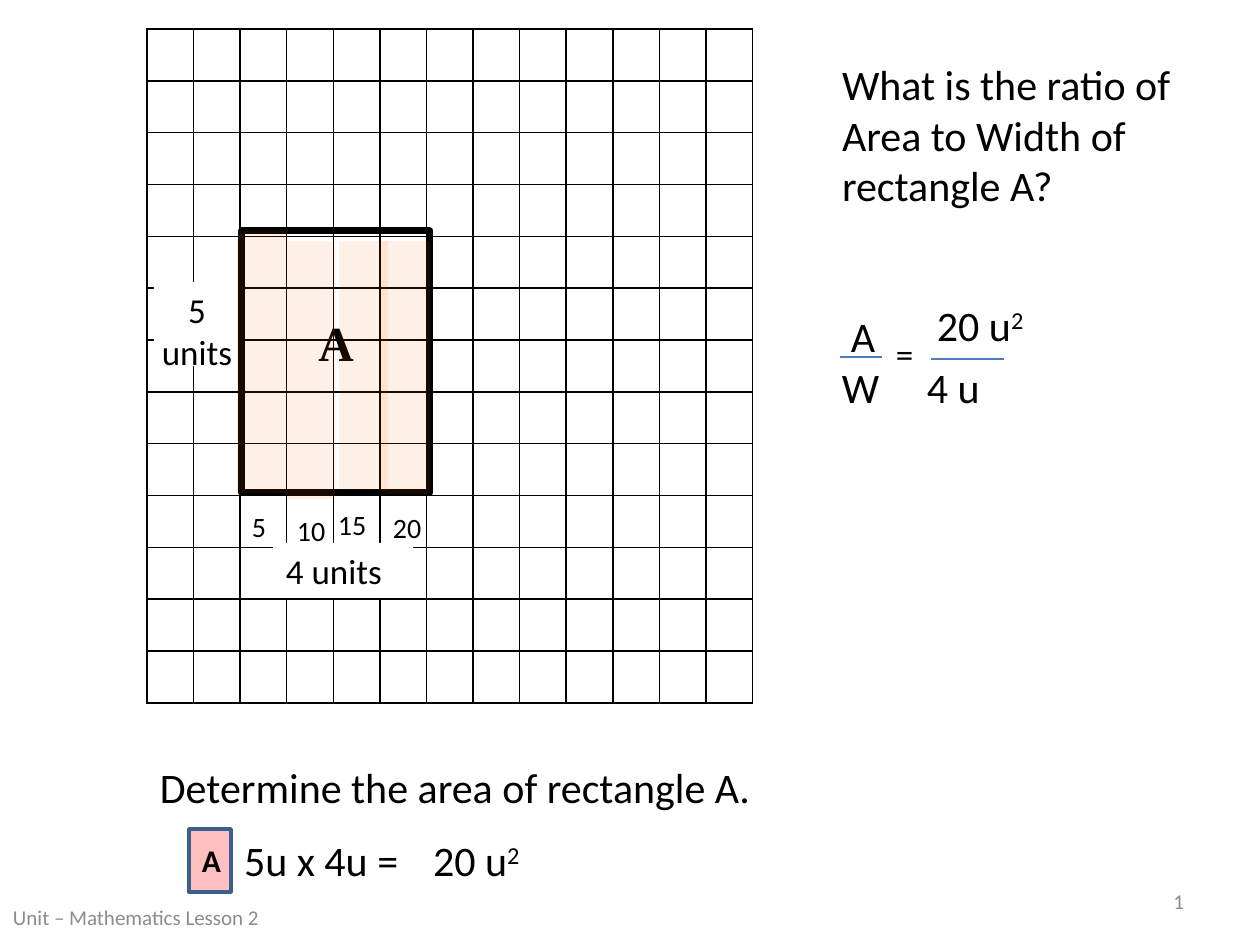
"""Build the lesson slide on the ratio of area to width of rectangle A."""
import pptx
import pptx.util
import pptx.dml.color
import pptx.enum.shapes
import pptx.enum.text
import pptx.oxml.ns
import lxml.etree

PX = 914400 / 126
BLACK = pptx.dml.color.RGBColor(0x00, 0x00, 0x00)
WHITE = pptx.dml.color.RGBColor(0xFF, 0xFF, 0xFF)
ORANGE = pptx.dml.color.RGBColor(0xFF, 0x66, 0x00)
RED = pptx.dml.color.RGBColor(0xFF, 0x00, 0x00)
NAVY = pptx.dml.color.RGBColor(0x3A, 0x5F, 0x8C)
BLUE = pptx.dml.color.RGBColor(0x4B, 0x7E, 0xBC)
GRAY = pptx.dml.color.RGBColor(0x8C, 0x8C, 0x8C)
ALIGN = pptx.enum.text.PP_ALIGN
ANCHOR = pptx.enum.text.MSO_ANCHOR
qn = pptx.oxml.ns.qn

lesson = pptx.Presentation()
lesson.slide_width = round(1260 * PX)
lesson.slide_height = round(945 * PX)
slide = lesson.slides.add_slide(lesson.slide_layouts[6])


def block(box, fill=None, opacity=100, line=None, weight=1, parent=slide.shapes):
    rect = parent.add_shape(pptx.enum.shapes.MSO_SHAPE.RECTANGLE, *[round(v * PX) for v in box])
    rect.shadow.inherit = False
    if fill is None:
        rect.fill.background()
    else:
        rect.fill.solid()
        rect.fill.fore_color.rgb = fill
        if opacity < 100:
            color = rect.fill._xPr.find(qn("a:solidFill"))[0]
            lxml.etree.SubElement(color, qn("a:alpha")).set("val", str(opacity * 1000))
    if line is None:
        rect.line.fill.background()
    else:
        rect.line.color.rgb = line
        rect.line.width = pptx.util.Pt(weight)
    return rect


def write(text, box=None, host=None, parent=slide.shapes, size=24, font="Calibri", color=BLACK,
          bold=False, align=ALIGN.LEFT, anchor=ANCHOR.TOP, after=0, side=13, top=6, raised=""):
    host = host or parent.add_textbox(*[round(v * PX) for v in box])
    frame = host.text_frame
    frame.word_wrap = True
    frame.vertical_anchor = anchor
    frame.margin_left = frame.margin_right = round(side * PX)
    frame.margin_top = round(top * PX)
    frame.text = text
    if raised:
        exponent = frame.paragraphs[-1].add_run()
        exponent.text = raised
        exponent.font._element.set("baseline", "30000")
    for paragraph in frame.paragraphs:
        paragraph.alignment = align
        paragraph.space_after = pptx.util.Pt(after)
        for run in paragraph.runs:
            run.font.size = pptx.util.Pt(size)
            run.font.name = font
            run.font.bold = bold
            run.font.color.rgb = color
    return frame


grid = slide.shapes.add_table(13, 13, *[round(v * PX) for v in (147, 29, 606, 674)]).table
grid.first_row = grid.horz_banding = False
for cell in grid.iter_cells():
    cell.margin_top = cell.margin_bottom = 0
    borders = cell._tc.get_or_add_tcPr()
    for edge in ("a:lnL", "a:lnR", "a:lnT", "a:lnB"):
        border = lxml.etree.SubElement(borders, qn(edge), w="12700")
        ink = lxml.etree.SubElement(border, qn("a:solidFill"))
        lxml.etree.SubElement(ink, qn("a:srgbClr"), val="000000")
    cell.fill.solid()
    cell.fill.fore_color.rgb = WHITE

write("5 units", host=block((154, 282, 86, 84), WHITE), size=20, align=ALIGN.CENTER, after=10, side=0)
write("A", host=block((242, 231, 188, 262), line=BLACK, weight=4), size=28,
      font="Times New Roman", bold=True, align=ALIGN.CENTER, after=10, top=82)
write("4 units", host=block((273, 543, 140, 55), WHITE), size=20)

for count, strip, label in (
    ("5", (237, 231, 49, 262), (239, 504, 62, 47)),
    ("10", (286, 241, 49, 258), (284, 508, 73, 47)),
    ("15", (339, 241, 49, 249), (325, 501, 73, 45)),
    ("20", (381, 241, 49, 253), (380, 505, 73, 45)),
):
    column = slide.shapes.add_group_shape().shapes
    block(strip, ORANGE, opacity=9, parent=column)
    write(count, label, parent=column, size=16)

write("5u x 4u =", (231, 829, 231, 63))
write("Determine the area of rectangle A.", (147, 756, 998, 63))

ratio = slide.shapes.add_group_shape().shapes
write("What is the ratio of Area to Width of rectangle A?", (829, 53, 399, 165), parent=ratio)
numerator, denominator = write("A\nW\t4 u", (829, 305, 242, 115), parent=ratio).paragraphs
numerator._p.get_or_add_pPr().set("marL", str(round(9 * PX)))
stops = lxml.etree.SubElement(denominator._p.get_or_add_pPr(), qn("a:tabLst"))
lxml.etree.SubElement(stops, qn("a:tab"), pos=str(round(85 * PX)), algn="l")
for start, end, y in ((840, 882, 357), (931, 1004, 359)):
    bar = ratio.add_connector(pptx.enum.shapes.MSO_CONNECTOR.STRAIGHT,
                              *[round(v * PX) for v in (start, y, end, y)])
    bar.line.color.rgb = BLUE
    bar.line.width = pptx.util.Pt(0.75)
    lxml.etree.SubElement(bar._element.spPr, qn("a:effectLst"))
write("=", (883, 326, 53, 55), parent=ratio, size=20)

write("A", host=block((189, 829, 42, 63), RED, opacity=25, line=NAVY, weight=2), size=18,
      bold=True, align=ALIGN.CENTER, anchor=ANCHOR.MIDDLE)
for area in ((420, 829, 231, 63), (924, 294, 126, 63)):
    write("20 u", area, raised="2")

write("Unit – Mathematics Lesson 2", (0, 892, 399, 50), size=12, color=GRAY, anchor=ANCHOR.MIDDLE)
write("1", (903, 876, 294, 50), size=12, color=GRAY, align=ALIGN.RIGHT, anchor=ANCHOR.MIDDLE)

lesson.save("out.pptx")
